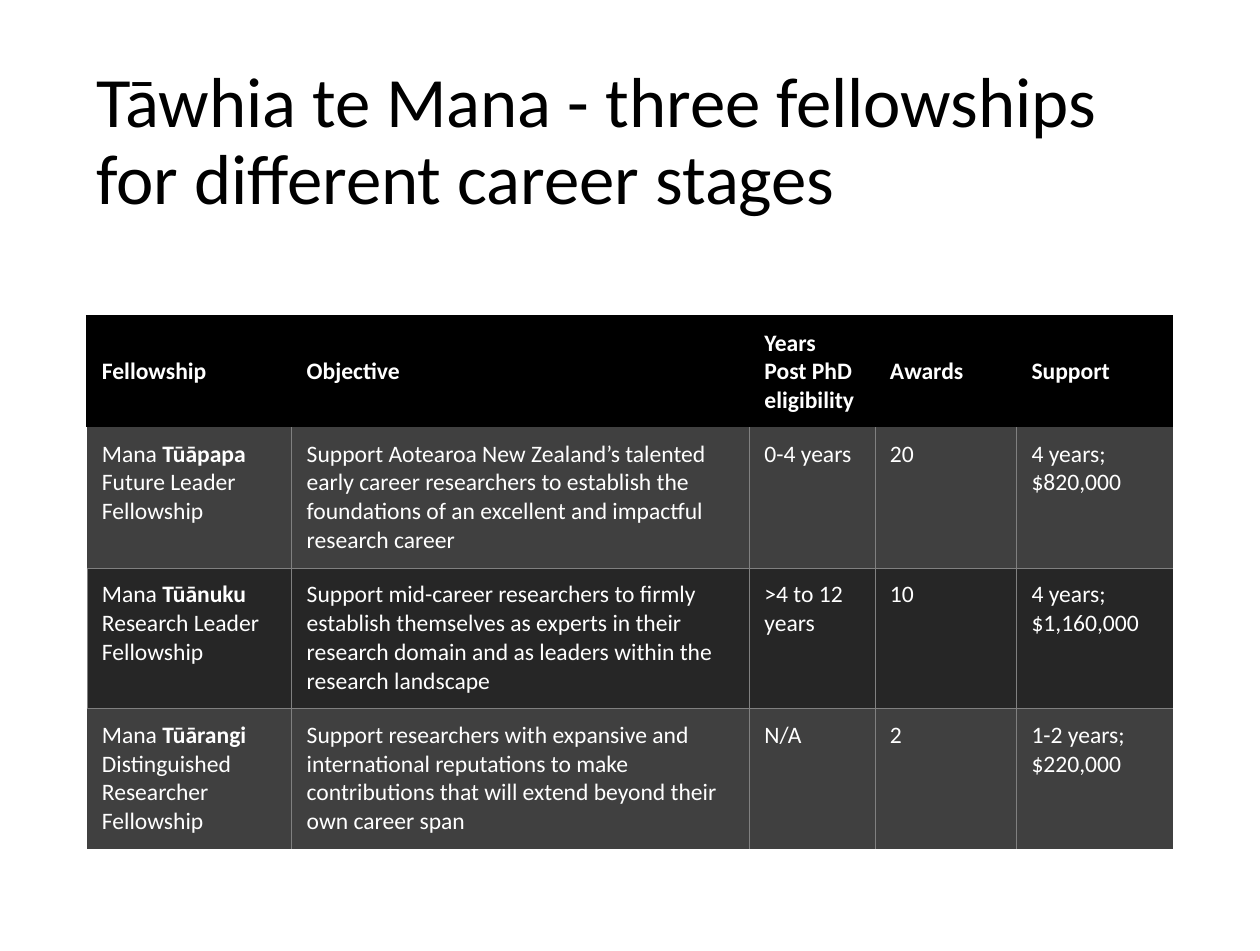
from dataclasses import dataclass

from lxml.etree import SubElement
from pptx import Presentation
from pptx.dml.color import RGBColor
from pptx.enum.text import MSO_VERTICAL_ANCHOR as Anchor
from pptx.oxml.ns import qn
from pptx.slide import Slide
from pptx.table import _Cell as Cell
from pptx.util import Inches, Pt

FONT = "Calibri"
BLACK, WHITE, GREY = "000000", "FFFFFF", "808080"
NO_STYLE = "{2D5ABB26-0587-4C30-8999-92F81FD0307C}"
LEFT, WIDTH = 0.92, 11.51
COLUMN_WIDTHS = (2.17, 4.85, 1.33, 1.5, 1.66)
HEADER_HEIGHT, ROW_HEIGHT = 1.18, 1.49
HEADINGS = ("Fellowship", "Objective", "Years Post PhD eligibility", "Awards", "Support")
CELL_FORMAT = {
    "margin_left": Inches(0.16),
    "margin_top": Inches(0.13),
    "margin_right": Inches(0.13),
    "margin_bottom": Inches(0.13),
}
TITLE_FORMAT = {"word_wrap": True, "vertical_anchor": Anchor.MIDDLE}


@dataclass(frozen=True)
class Fellowship:
    name: str
    objective: str
    eligibility: str
    awards: str
    support: str
    fill: str

    def texts(self) -> tuple[str, ...]:
        return self.name, self.objective, self.eligibility, self.awards, self.support


FELLOWSHIPS = (
    Fellowship(
        "Mana *Tūāpapa* Future Leader Fellowship",
        "Support Aotearoa New Zealand’s talented early career researchers to establish "
        "the foundations of an excellent and impactful research career",
        "0-4 years", "20", "4 years;\n$820,000", "404040",
    ),
    Fellowship(
        "Mana *Tūānuku* Research Leader Fellowship",
        "Support mid-career researchers to firmly establish themselves as experts in "
        "their research domain and as leaders within the research landscape",
        ">4 to 12 years", "10", "4 years;\n$1,160,000", "262626",
    ),
    Fellowship(
        "Mana *Tūārangi* Distinguished Researcher Fellowship",
        "Support researchers with expansive and international reputations to make "
        "contributions that will extend beyond their own career span",
        "N/A", "2", "1-2 years; $220,000", "404040",
    ),
)


def rgb(value: str) -> RGBColor:
    return RGBColor.from_string(value)


def apply(target: object, settings: dict) -> None:
    for name, value in settings.items():
        setattr(target, name, value)


def write(frame, text: str, size: float, color: str, bold: bool = False) -> None:
    """Write lines as paragraphs, with the parts between asterisks in bold."""
    for number, line in enumerate(text.split("\n")):
        para = frame.add_paragraph() if number else frame.paragraphs[0]
        for position, part in enumerate(line.split("*")):
            span = para.add_run()
            span.text = part
            apply(span.font, {"name": FONT, "size": Pt(size), "bold": bold or position % 2 == 1})
            span.font.color.rgb = rgb(color)


def draw_borders(cell: Cell, sides: str, color: str, width: float) -> None:
    properties = cell._tc.get_or_add_tcPr()
    for side in sides:
        line = SubElement(properties, qn(f"a:ln{side}"), w=str(Pt(width)))
        SubElement(SubElement(line, qn("a:solidFill")), qn("a:srgbClr"), val=color)


def body_sides(row: int, column: int) -> str:
    """Return the ruled sides of a body cell in schema order."""
    rules = {
        "L": column > 0 or row == 2,
        "R": column < len(COLUMN_WIDTHS) - 1,
        "T": row == 2,
        "B": row == 1,
    }
    return "".join(side for side, shown in rules.items() if shown)


def fill_cell(cell: Cell, text: str, fill: str, bold: bool = False) -> None:
    apply(cell, CELL_FORMAT)
    cell.fill.solid()
    cell.fill.fore_color.rgb = rgb(fill)
    write(cell.text_frame, text, 18, WHITE, bold)


def add_title(page: Slide) -> None:
    box = page.shapes.add_textbox(Inches(LEFT), Inches(0.54), Inches(WIDTH), Inches(1.95))
    apply(box.text_frame, TITLE_FORMAT)
    write(box.text_frame, "Tāwhia te Mana - three fellowships for different career stages", 54, BLACK)
    box.text_frame.paragraphs[0].line_spacing = 0.9


def add_fellowship_table(page: Slide) -> None:
    heights = (HEADER_HEIGHT, *[ROW_HEIGHT] * len(FELLOWSHIPS))
    table = page.shapes.add_table(
        len(heights), len(COLUMN_WIDTHS),
        Inches(LEFT), Inches(3.35), Inches(WIDTH), Inches(sum(heights)),
    ).table
    table._tbl.tblPr.find(qn("a:tableStyleId")).text = NO_STYLE
    for column, width in zip(table.columns, COLUMN_WIDTHS):
        column.width = Inches(width)
    for row, height in zip(table.rows, heights):
        row.height = Inches(height)
    for column, heading in enumerate(HEADINGS):
        cell = table.cell(0, column)
        draw_borders(cell, "T" if column else "LT", BLACK, 1.5)
        fill_cell(cell, heading, BLACK, bold=True)
        cell.vertical_anchor = Anchor.MIDDLE
    for row, fellowship in enumerate(FELLOWSHIPS, start=1):
        for column, text in enumerate(fellowship.texts()):
            cell = table.cell(row, column)
            draw_borders(cell, body_sides(row, column), GREY, 0.5)
            fill_cell(cell, text, fellowship.fill)


def main() -> None:
    deck = Presentation()
    apply(deck, {"slide_width": Inches(13.35), "slide_height": Inches(10.08)})
    page = deck.slides.add_slide(deck.slide_layouts[6])
    add_title(page)
    add_fellowship_table(page)
    deck.save("out.pptx")


if __name__ == "__main__":
    main()
